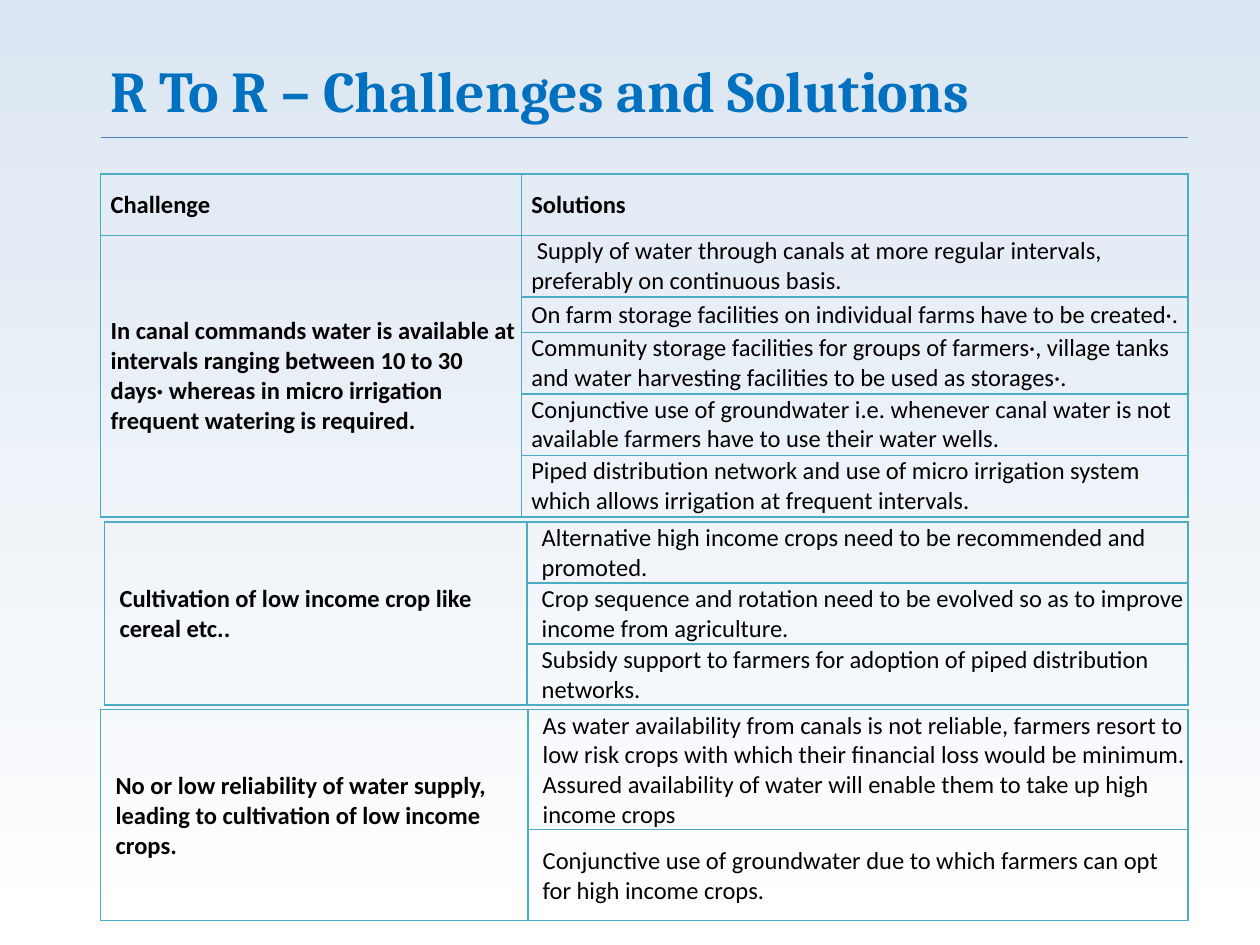
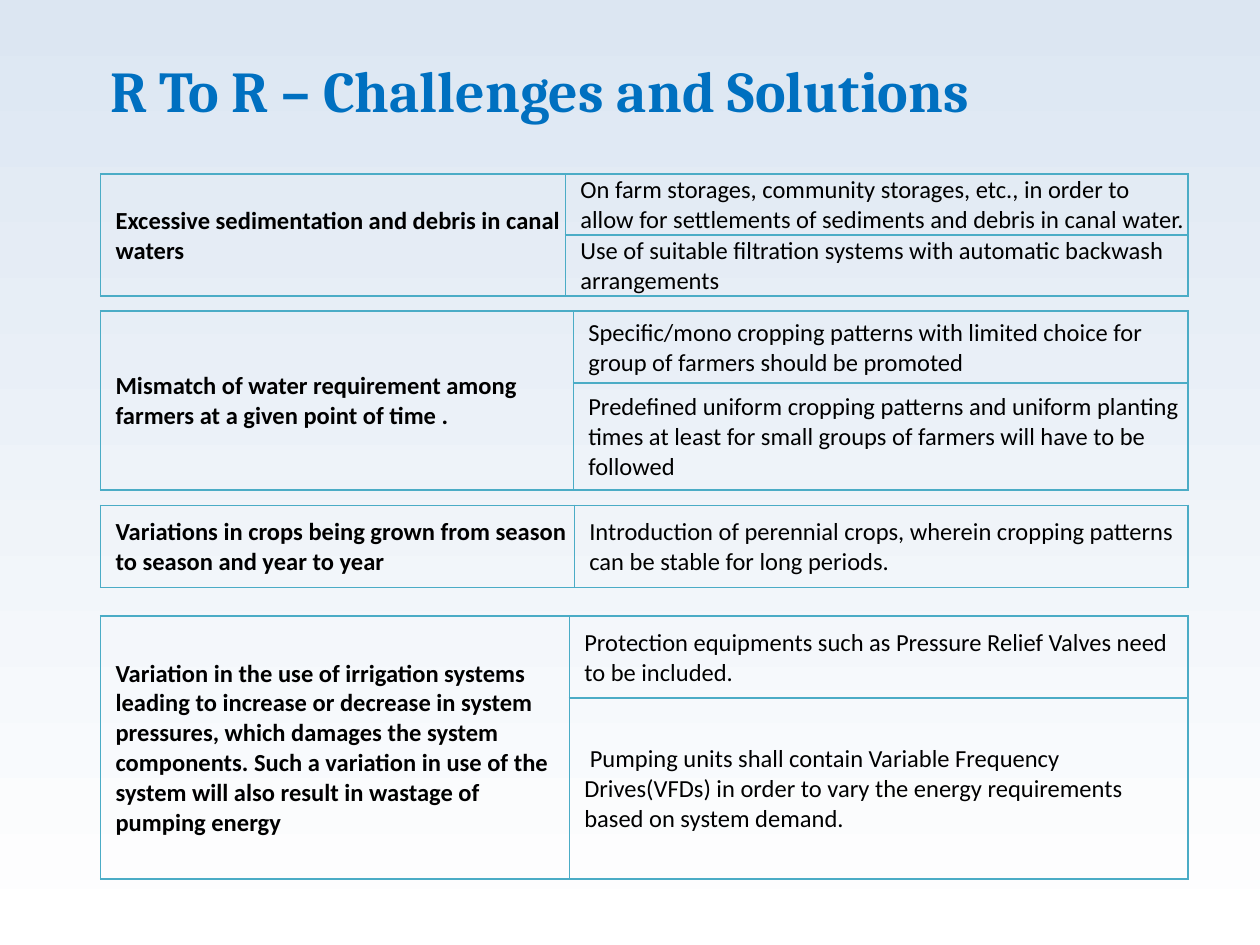
from lxml.etree import SubElement
from pptx import Presentation
from pptx.dml.color import RGBColor
from pptx.enum.shapes import MSO_CONNECTOR
from pptx.enum.text import MSO_ANCHOR
from pptx.oxml.ns import qn
from pptx.util import Cm, Pt

TITLE_BLUE = RGBColor(0x00, 0x70, 0xC0)
RULE_BLUE = RGBColor(0x4F, 0x81, 0xBD)
BORDER_TEAL = RGBColor(0x4B, 0xAC, 0xC6)
SKY = RGBColor(0xDC, 0xE6, 0xF2)
WHITE = RGBColor(0xFF, 0xFF, 0xFF)
BLACK = RGBColor(0x00, 0x00, 0x00)

LEFT = 2.03
RIGHT = 23.95
TOP = 3.51
TITLE = "R To R – Challenges and Solutions"
WIDE_INSETS = (0.3, 0.03, 0.03, 0)
NARROW_INSETS = (0.2, 0, 0.1, 0)


def add_run(paragraph, text, font_name, size, color, bold):
    """Add one formatted run to a paragraph."""
    run = paragraph.add_run()
    run.text = text
    run.font.name = font_name
    run.font.size = Pt(size)
    run.font.color.rgb = color
    run.font.bold = bold


def set_insets(target, insets):
    """Set the left, top, right and bottom margins in centimetres."""
    target.margin_left, target.margin_top, target.margin_right, target.margin_bottom = map(Cm, insets)


def add_slide(presentation):
    """Add a blank slide with the shared background and title."""
    slide = presentation.slides.add_slide(presentation.slide_layouts[6])
    fill = slide.background.fill
    fill.gradient()
    fill.gradient_angle = 270
    for stop, position, color in zip(fill.gradient_stops, (0, 1), (SKY, WHITE)):
        stop.position = position
        stop.color.rgb = color
    title = slide.shapes.add_textbox(Cm(LEFT), Cm(1.02), Cm(21.62), Cm(1.75))
    frame = title.text_frame
    frame.word_wrap = True
    frame.vertical_anchor = MSO_ANCHOR.MIDDLE
    set_insets(frame, (0.19, 0.1, 0.19, 0.1))
    paragraph = frame.paragraphs[0]
    paragraph.line_spacing = 0.9
    add_run(paragraph, TITLE, "Cambria", 33, TITLE_BLUE, True)
    return slide


def add_title_rule(slide):
    """Draw the thin line under the title."""
    rule = slide.shapes.add_connector(MSO_CONNECTOR.STRAIGHT, Cm(LEFT), Cm(2.77), Cm(RIGHT), Cm(2.77))
    rule.line.color.rgb = RULE_BLUE
    rule.line.width = Pt(0.5)
    SubElement(rule._element.spPr, qn("a:effectLst"))


def style_cell(cell, insets):
    """Give a cell teal borders, no fill and centred anchoring."""
    properties = cell._tc.get_or_add_tcPr()
    for side in ("a:lnL", "a:lnR", "a:lnT", "a:lnB"):
        border = SubElement(properties, qn(side), w=str(Pt(1)))
        solid = SubElement(border, qn("a:solidFill"))
        SubElement(solid, qn("a:srgbClr"), val=str(BORDER_TEAL))
    cell.fill.background()
    cell.vertical_anchor = MSO_ANCHOR.MIDDLE
    set_insets(cell, insets)


def add_challenge_table(slide, top, challenge_width, row_heights, challenge, solutions,
                        left=LEFT, insets=WIDE_INSETS, header=None):
    """Add a table with one challenge beside its stacked solutions."""
    first = 1 if header else 0
    row_count = len(row_heights)
    width = RIGHT - left
    table = slide.shapes.add_table(
        row_count, 2, Cm(left), Cm(top), Cm(width), Cm(sum(row_heights))).table
    table.first_row = False
    table.horz_banding = False
    table.columns[0].width = Cm(challenge_width)
    table.columns[1].width = Cm(width - challenge_width)
    for row, height in zip(table.rows, row_heights):
        row.height = Cm(height)
    for cell in table.iter_cells():
        style_cell(cell, insets)
    if row_count - first > 1:
        table.cell(first, 0).merge(table.cell(row_count - 1, 0))
    entries = [(0, column, text, True) for column, text in enumerate(header or ())]
    entries.append((first, 0, challenge, True))
    entries += [(row, 1, text, False) for row, text in enumerate(solutions, first)]
    for row, column, text, bold in entries:
        paragraph = table.cell(row, column).text_frame.paragraphs[0]
        add_run(paragraph, text, "Calibri", 14, BLACK, bold)


def build_supply_slide(presentation):
    """Build the slide on water supply and low income crops."""
    slide = add_slide(presentation)
    add_title_rule(slide)
    add_challenge_table(
        slide, TOP, 8.48, [1.24, 1.24, 0.71, 1.24, 1.24, 1.24],
        "In canal commands water is available at intervals ranging between 10 to 30 days· "
        "whereas in micro irrigation frequent watering is required.",
        [" Supply of water through canals at more regular intervals, preferably on continuous basis.",
         "On farm storage facilities on individual farms have to be created·.",
         "Community storage facilities for groups of farmers·, village tanks and water "
         "harvesting facilities to be used as storages·.",
         "Conjunctive use of groundwater i.e. whenever canal water is not available farmers "
         "have to use their water wells.",
         "Piped distribution network and use of micro irrigation system which allows "
         "irrigation at frequent intervals."],
        insets=NARROW_INSETS, header=("Challenge", "Solutions"))
    add_challenge_table(
        slide, 10.52, 8.51, [1.23] * 3,
        "Cultivation of low income crop like cereal etc..",
        ["Alternative high income crops need to be recommended and promoted.",
         "Crop sequence and rotation need to be evolved so as to improve income from agriculture.",
         "Subsidy support to farmers for adoption of piped distribution networks."],
        left=2.11)
    add_challenge_table(
        slide, 14.3, 8.61, [2.42, 1.84],
        "No or low reliability of water supply, leading to cultivation of low income crops.",
        ["As water availability from canals is not reliable, farmers resort to low risk crops "
         "with which their financial loss would be minimum. Assured availability of water "
         "will enable them to take up high income crops",
         "Conjunctive use of groundwater due to which farmers can opt for high income crops."])


def build_operation_slide(presentation):
    """Build the slide on sediment, cropping patterns and pressure."""
    slide = add_slide(presentation)
    add_challenge_table(
        slide, TOP, 9.37, [1.23] * 2,
        "Excessive sedimentation and debris in canal waters",
        ["On farm storages, community storages, etc., in order to allow for settlements of "
         "sediments and debris in canal water.",
         "Use of suitable filtration systems with automatic backwash arrangements"])
    add_challenge_table(
        slide, 6.27, 9.53, [1.45, 2.16],
        "Mismatch of water requirement among farmers at a given point of time .",
        ["Specific/mono cropping patterns with limited choice for group of farmers should be promoted",
         "Predefined uniform cropping patterns and uniform planting times at least for small "
         "groups of farmers will have to be followed"])
    add_challenge_table(
        slide, 10.19, 9.55, [1.65],
        "Variations in crops being grown from season to season and year to year",
        ["Introduction of perennial crops, wherein cropping patterns can be stable for long periods."])
    add_challenge_table(
        slide, 12.42, 9.45, [1.65, 3.65],
        "Variation in the use of irrigation systems leading to increase or decrease in system "
        "pressures, which damages the system components. Such a variation in use of the system "
        "will also result in wastage of pumping energy",
        ["Protection equipments such as Pressure Relief Valves need to be included.",
         " Pumping units shall contain Variable Frequency Drives(VFDs) in order to vary the "
         "energy requirements based on system demand."])


def main():
    """Build both slides and save the presentation."""
    presentation = Presentation()
    presentation.slide_width = Cm(25.4)
    presentation.slide_height = Cm(19.05)
    build_supply_slide(presentation)
    build_operation_slide(presentation)
    presentation.save("out.pptx")


if __name__ == "__main__":
    main()
